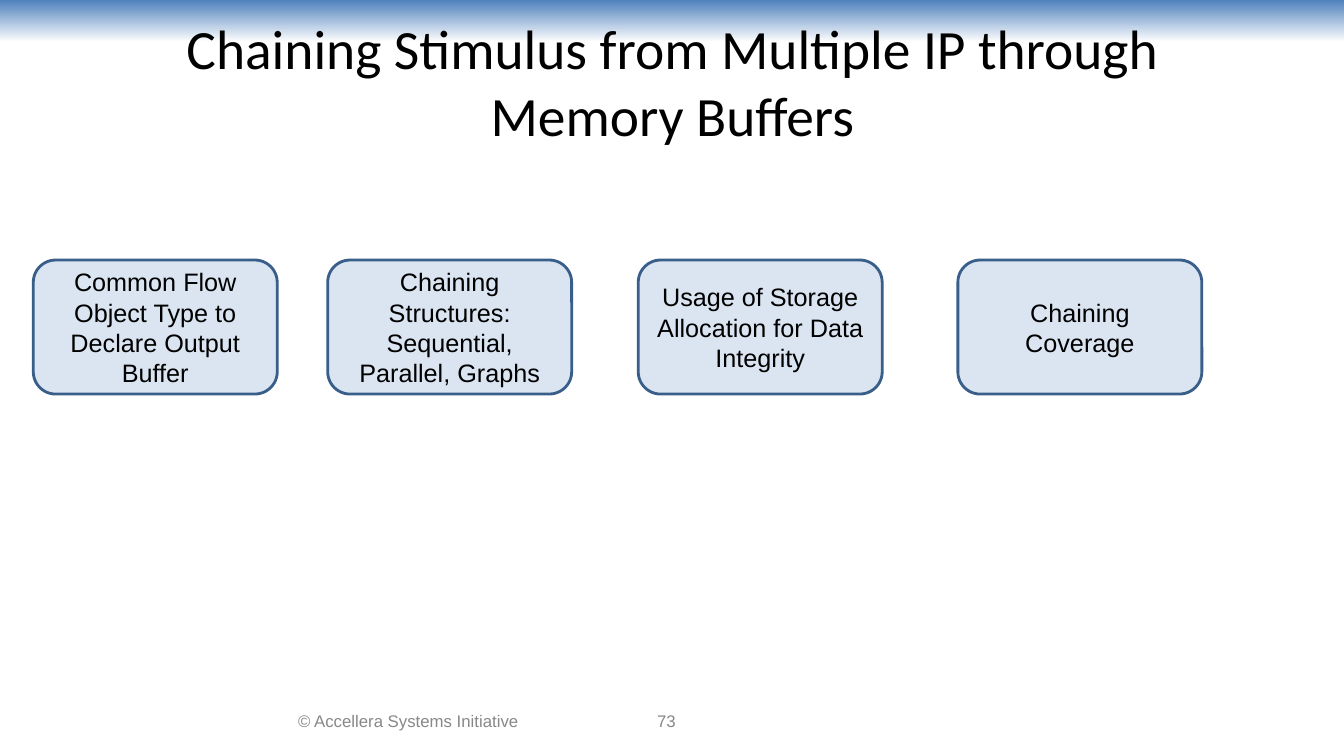
from pptx import Presentation
from pptx.dml.color import RGBColor
from pptx.enum import shapes, text
from pptx.util import Inches, Pt

COLORS = {
    "band": "4F81BD",
    "white": "FFFFFF",
    "box": "DAE5F1",
    "outline": "395E89",
    "black": "000000",
    "footer": "888888",
}

TOPICS = [
    (0.33, "Common Flow Object Type to Declare Output Buffer"),
    (3.25, "Chaining Structures: Sequential, Parallel, Graphs"),
    (6.33, "Usage of Storage Allocation for Data Integrity"),
    (9.5, "Chaining Coverage"),
]


def color(name):
    return RGBColor.from_string(COLORS[name])


def write(shape, words, size, font_name, color_name):
    frame = shape.text_frame
    frame.word_wrap = True
    frame.vertical_anchor = text.MSO_ANCHOR.MIDDLE
    frame.text = words
    paragraph = frame.paragraphs[0]
    paragraph.alignment = text.PP_ALIGN.CENTER
    font = paragraph.runs[0].font
    font.size = Pt(size)
    font.name = font_name
    font.color.rgb = color(color_name)


def add_band(slide):
    band = slide.shapes.add_shape(
        shapes.MSO_SHAPE.RECTANGLE, 0, 0, Inches(13.33), Inches(0.42))
    band.shadow.inherit = False
    band.line.fill.background()
    band.fill.gradient()
    band.fill.gradient_angle = 270
    for stop, name in zip(band.fill.gradient_stops, ("band", "white")):
        stop.color.rgb = color(name)


def add_label(slide, left, top, width, height, words, size, font_name, color_name):
    label = slide.shapes.add_textbox(
        Inches(left), Inches(top), Inches(width), Inches(height))
    write(label, words, size, font_name, color_name)


def add_topic(slide, left, words):
    topic = slide.shapes.add_shape(
        shapes.MSO_SHAPE.ROUNDED_RECTANGLE,
        Inches(left), Inches(2.58), Inches(2.42), Inches(1.33))
    topic.shadow.inherit = False
    topic.fill.solid()
    topic.fill.fore_color.rgb = color("box")
    topic.line.color.rgb = color("outline")
    topic.line.width = Pt(2)
    write(topic, words, 18, "Arial", "black")


def main():
    deck = Presentation()
    deck.slide_width = Inches(13.33)
    deck.slide_height = Inches(7.5)
    slide = deck.slides.add_slide(deck.slide_layouts[6])

    add_band(slide)
    add_label(slide, 0.92, 0.4, 11.5, 0.8,
              "Chaining Stimulus from Multiple IP through Memory Buffers",
              39.6, "Calibri", "black")
    for left, words in TOPICS:
        add_topic(slide, left, words)
    add_label(slide, 2.44, 6.95, 3.22, 0.4,
              "© Accellera Systems Initiative", 12, "Arial", "footer")
    add_label(slide, 5.33, 6.95, 2.56, 0.4, "73", 12, "Arial", "footer")

    deck.save("out.pptx")


if __name__ == "__main__":
    main()
